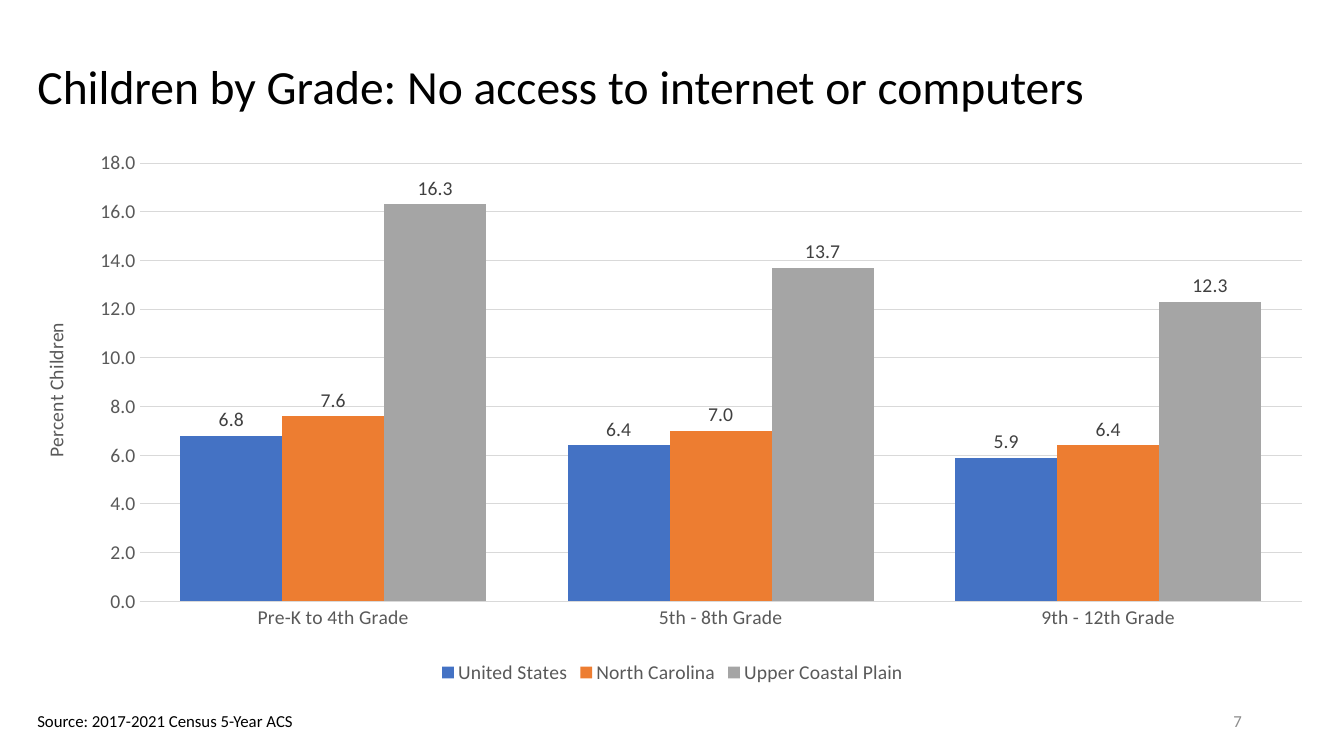
from lxml import etree
from pptx import Presentation
from pptx import util as u
from pptx.chart import data as chart_data
from pptx.dml import color
from pptx.enum import chart as chart_enum
from pptx.enum import text
from pptx.oxml import ns

COLORS = {
    "black": "000000",
    "number": "8C8C8C",
    "axis": "595959",
    "label": "404040",
    "grid": "D9D9D9",
    "United States": "4472C4",
    "North Carolina": "ED7D31",
    "Upper Coastal Plain": "A5A5A5",
}
NUMBER_FORMAT = "#,##0.0"


def format_font(font, size, color_name):
    values = {"name": "Calibri", "size": u.Pt(size), "bold": False}
    for name, value in values.items():
        setattr(font, name, value)
    font.color.rgb = color.RGBColor.from_string(COLORS[color_name])


def fill_text(shape, box, content, size, color_name, frame_format, paragraph_format):
    for name, value in zip(("left", "top", "width", "height"), box):
        setattr(shape, name, u.Cm(value))
    for name, value in frame_format.items():
        setattr(shape.text_frame, name, value)
    paragraph = shape.text_frame.paragraphs[0]
    for name, value in paragraph_format.items():
        setattr(paragraph, name, value)
    run = paragraph.add_run()
    run.text = content
    format_font(run.font, size, color_name)


presentation = Presentation()
presentation.slide_width = u.Cm(33.87)
presentation.slide_height = u.Cm(19.05)
slide = presentation.slides.add_slide(presentation.slide_layouts[5])

middle = {"vertical_anchor": text.MSO_ANCHOR.MIDDLE, "word_wrap": True}
fill_text(slide.shapes.title, (0.69, 0.86, 32.41, 2.77),
          "Children by Grade: No access to internet or computers", 34, "black",
          {**middle, "auto_size": text.MSO_AUTO_SIZE.NONE},
          {"alignment": text.PP_ALIGN.LEFT, "line_spacing": 0.9})

footers = [
    ((23.93, 17.65, 7.62, 1.02), "7", "number", middle,
     {"alignment": text.PP_ALIGN.RIGHT}),
    ((0.69, 17.78, 7.06, 0.76), "Source: 2017-2021 Census 5-Year ACS", "black",
     {"word_wrap": False, "auto_size": text.MSO_AUTO_SIZE.SHAPE_TO_FIT_TEXT}, {}),
]
for box, content, color_name, frame_format, paragraph_format in footers:
    footer = slide.shapes.add_textbox(*map(u.Cm, box))
    fill_text(footer, box, content, 12, color_name, frame_format, paragraph_format)

grades = chart_data.CategoryChartData(number_format=NUMBER_FORMAT)
grades.categories = ["Pre-K to 4th Grade", "5th - 8th Grade", "9th - 12th Grade"]
grades.add_series("United States", (6.8, 6.4, 5.9))
grades.add_series("North Carolina", (7.6, 7.0, 6.4))
grades.add_series("Upper Coastal Plain", (16.3, 13.7, 12.3))

chart = slide.shapes.add_chart(
    chart_enum.XL_CHART_TYPE.COLUMN_CLUSTERED,
    u.Cm(0.69), u.Cm(3.63), u.Cm(32.51), u.Cm(13.72), grades).chart
format_font(chart.font, 14, "black")
chart.has_title = False
chart.has_legend = True
chart.legend.position = chart_enum.XL_LEGEND_POSITION.BOTTOM
chart.legend.include_in_layout = False
format_font(chart.legend.font, 14, "axis")

plot = chart.plots[0]
for name, value in {"gap_width": 80, "overlap": 0, "vary_by_categories": False}.items():
    setattr(plot, name, value)
for series in plot.series:
    series.format.fill.solid()
    series.format.fill.fore_color.rgb = color.RGBColor.from_string(COLORS[series.name])
    labels = series.data_labels
    label_format = {
        "show_value": True,
        "number_format": NUMBER_FORMAT,
        "number_format_is_linked": False,
        "position": chart_enum.XL_LABEL_POSITION.OUTSIDE_END,
    }
    for name, value in label_format.items():
        setattr(labels, name, value)
    format_font(labels.font, 14, "label")

category_axis, value_axis = chart.category_axis, chart.value_axis
for axis in (category_axis, value_axis):
    axis.major_tick_mark = chart_enum.XL_TICK_MARK.NONE
    axis.minor_tick_mark = chart_enum.XL_TICK_MARK.NONE
    format_font(axis.tick_labels.font, 14, "axis")
value_format = {"minimum_scale": 0, "maximum_scale": 18, "major_unit": 2,
                "has_major_gridlines": True}
for name, value in value_format.items():
    setattr(value_axis, name, value)
value_axis.tick_labels.number_format = NUMBER_FORMAT
value_axis.tick_labels.number_format_is_linked = False
value_axis.format.line.fill.background()
for line in (category_axis.format.line, value_axis.major_gridlines.format.line):
    line.width = u.Pt(0.75)
    line.color.rgb = color.RGBColor.from_string(COLORS["grid"])

axis_title = value_axis.axis_title.text_frame
axis_title.text = "Percent Children"
format_font(axis_title.paragraphs[0].runs[0].font, 14, "axis")
body = value_axis.axis_title._element.find(".//" + ns.qn("a:bodyPr"))
body.set("rot", "-5400000")
body.set("vert", "horz")

plot_area = chart._chartSpace.chart.plotArea
for old_layout in plot_area.findall(ns.qn("c:layout")):
    plot_area.remove(old_layout)
layout = etree.Element(ns.qn("c:layout"))
manual_layout = etree.SubElement(layout, ns.qn("c:manualLayout"))
placement = {"layoutTarget": "inner", "xMode": "edge", "yMode": "edge",
             "x": "0.087", "y": "0.035", "w": "0.901", "h": "0.805"}
for name, value in placement.items():
    etree.SubElement(manual_layout, ns.qn("c:" + name)).set("val", value)
plot_area.insert(0, layout)

presentation.save("out.pptx")
